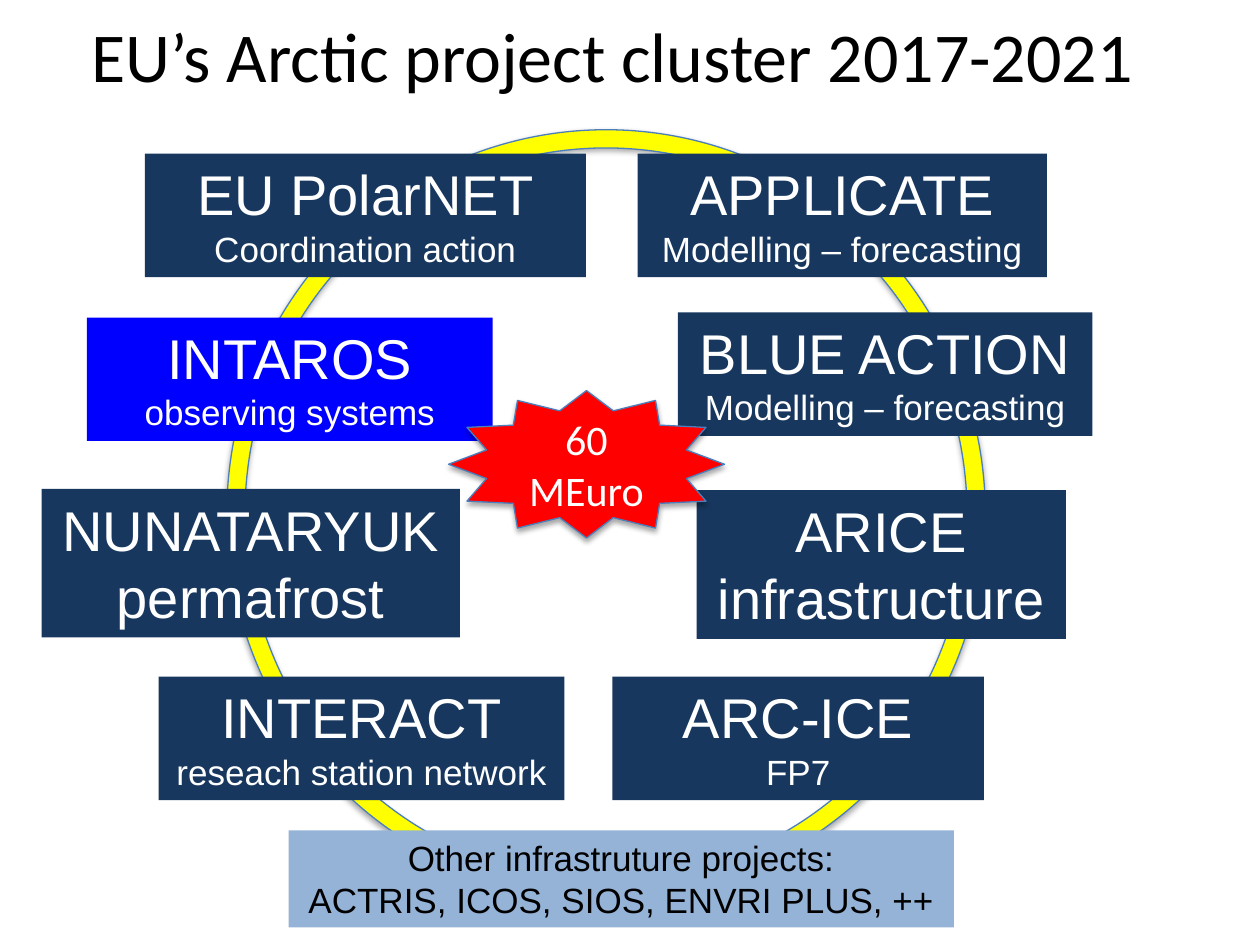
"""Build the slide on the EU's Arctic project cluster 2017-2021."""
from lxml.etree import SubElement
from pptx import Presentation
from pptx.dml.color import RGBColor
from pptx.enum.shapes import MSO_SHAPE
from pptx.enum.text import MSO_ANCHOR, MSO_AUTO_SIZE, PP_ALIGN
from pptx.oxml.ns import qn
from pptx.util import Inches, Pt

BLACK = RGBColor(0x00, 0x00, 0x00)
WHITE = RGBColor(0xFF, 0xFF, 0xFF)
NAVY = RGBColor(0x17, 0x37, 0x5E)
BLUE = RGBColor(0x00, 0x00, 0xFF)
LIGHT_BLUE = RGBColor(0x95, 0xB3, 0xD7)
OUTLINE_BLUE = RGBColor(0x4B, 0x7E, 0xBC)
YELLOW = RGBColor(0xFF, 0xFF, 0x00)
RED = RGBColor(0xFF, 0x00, 0x00)


def write_lines(shape, lines, font_name, color):
    text_frame = shape.text_frame
    text_frame.word_wrap = True
    text_frame.text = "\n".join(text for text, size in lines)
    for paragraph, (text, size) in zip(text_frame.paragraphs, lines):
        paragraph.alignment = PP_ALIGN.CENTER
        for run in paragraph.runs:
            run.font.name = font_name
            run.font.size = Pt(size)
            run.font.color.rgb = color


def add_outlined_shape(kind, left, top, width, height, fill):
    shape = slide.shapes.add_shape(
        kind, Inches(left), Inches(top), Inches(width), Inches(height))
    shape.fill.solid()
    shape.fill.fore_color.rgb = fill
    shape.line.color.rgb = OUTLINE_BLUE
    shape.line.width = Pt(0.75)
    shape.shadow.inherit = False
    effects = shape.element.spPr.find(qn("a:effectLst"))
    shadow = SubElement(effects, qn("a:outerShdw"), blurRad=str(Pt(3.1)),
                        dist=str(Pt(1.8)), dir="5400000", rotWithShape="0")
    shadow_color = SubElement(shadow, qn("a:srgbClr"), val="000000")
    SubElement(shadow_color, qn("a:alpha"), val="35000")
    return shape


presentation = Presentation()
presentation.slide_width = Inches(10)
presentation.slide_height = Inches(7.5)
slide = presentation.slides.add_slide(presentation.slide_layouts[5])

title = slide.shapes.title
title.left, title.top = Inches(0), Inches(0)
title.width, title.height = Inches(10), Inches(0.86)
write_lines(title, [("EU’s Arctic project cluster 2017-2021", 40)], "Calibri", BLACK)
title.text_frame.vertical_anchor = MSO_ANCHOR.MIDDLE
title.text_frame.margin_right = Inches(0.38)

ring = add_outlined_shape(MSO_SHAPE.DONUT, 1.8, 1.03, 6.02, 6.1, YELLOW)
ring.adjustments[0] = 0.024

projects = [
    (0.69, 2.52, 3.22, 0.98, BLUE, WHITE, [("INTAROS", 32), ("observing systems", 20)]),
    (5.06, 1.22, 3.25, 0.98, NAVY, WHITE, [("APPLICATE", 32), ("Modelling – forecasting", 20)]),
    (5.38, 2.48, 3.29, 0.98, NAVY, WHITE, [("BLUE ACTION", 32), ("Modelling – forecasting", 20)]),
    (0.33, 3.88, 3.32, 1.18, NAVY, WHITE, [("NUNATARYUK permafrost", 32)]),
    (1.15, 1.22, 3.5, 0.98, NAVY, WHITE, [("EU PolarNET", 32), ("Coordination action", 20)]),
    (2.29, 6.59, 5.28, 0.77, LIGHT_BLUE, BLACK,
     [("Other infrastruture projects:", 20), ("ACTRIS, ICOS, SIOS, ENVRI PLUS, ++", 20)]),
    (5.53, 3.89, 2.93, 1.18, NAVY, WHITE, [("ARICE", 32), ("infrastructure", 32)]),
    (1.26, 5.37, 3.22, 0.98, NAVY, WHITE, [("INTERACT", 32), ("reseach station network", 20)]),
    (4.86, 5.37, 2.95, 0.98, NAVY, WHITE, [("ARC-ICE", 32), ("FP7", 20)]),
]
for left, top, width, height, fill, text_color, lines in projects:
    project_box = slide.shapes.add_textbox(
        Inches(left), Inches(top), Inches(width), Inches(height))
    project_box.fill.solid()
    project_box.fill.fore_color.rgb = fill
    write_lines(project_box, lines, "Arial", text_color)
    project_box.text_frame.auto_size = MSO_AUTO_SIZE.SHAPE_TO_FIT_TEXT

budget_star = add_outlined_shape(MSO_SHAPE.STAR_12_POINT, 3.56, 3.1, 2.19, 1.17, RED)
write_lines(budget_star, [("60 MEuro", 24)], "Calibri", WHITE)
budget_star.text_frame.vertical_anchor = MSO_ANCHOR.MIDDLE

presentation.save("out.pptx")
